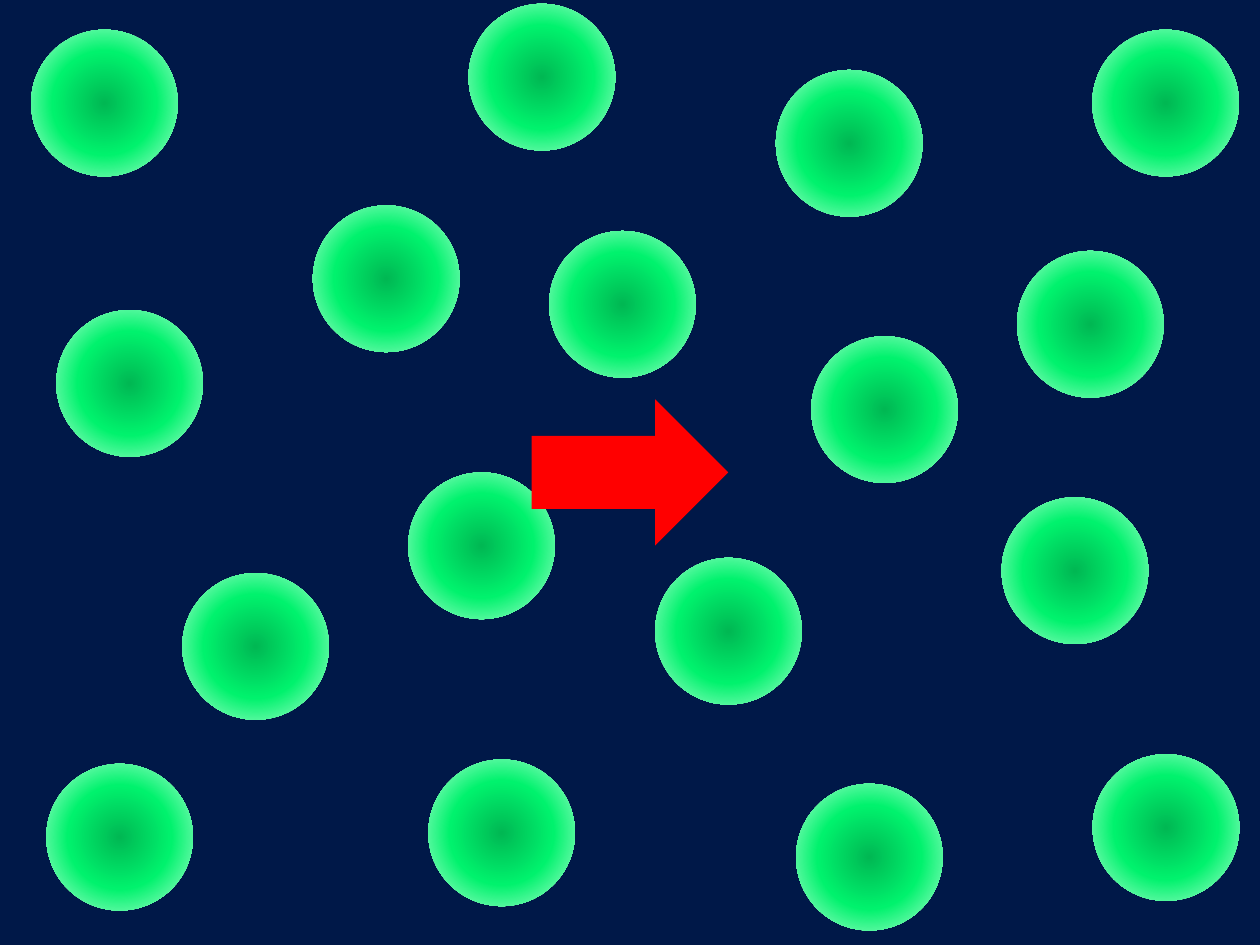
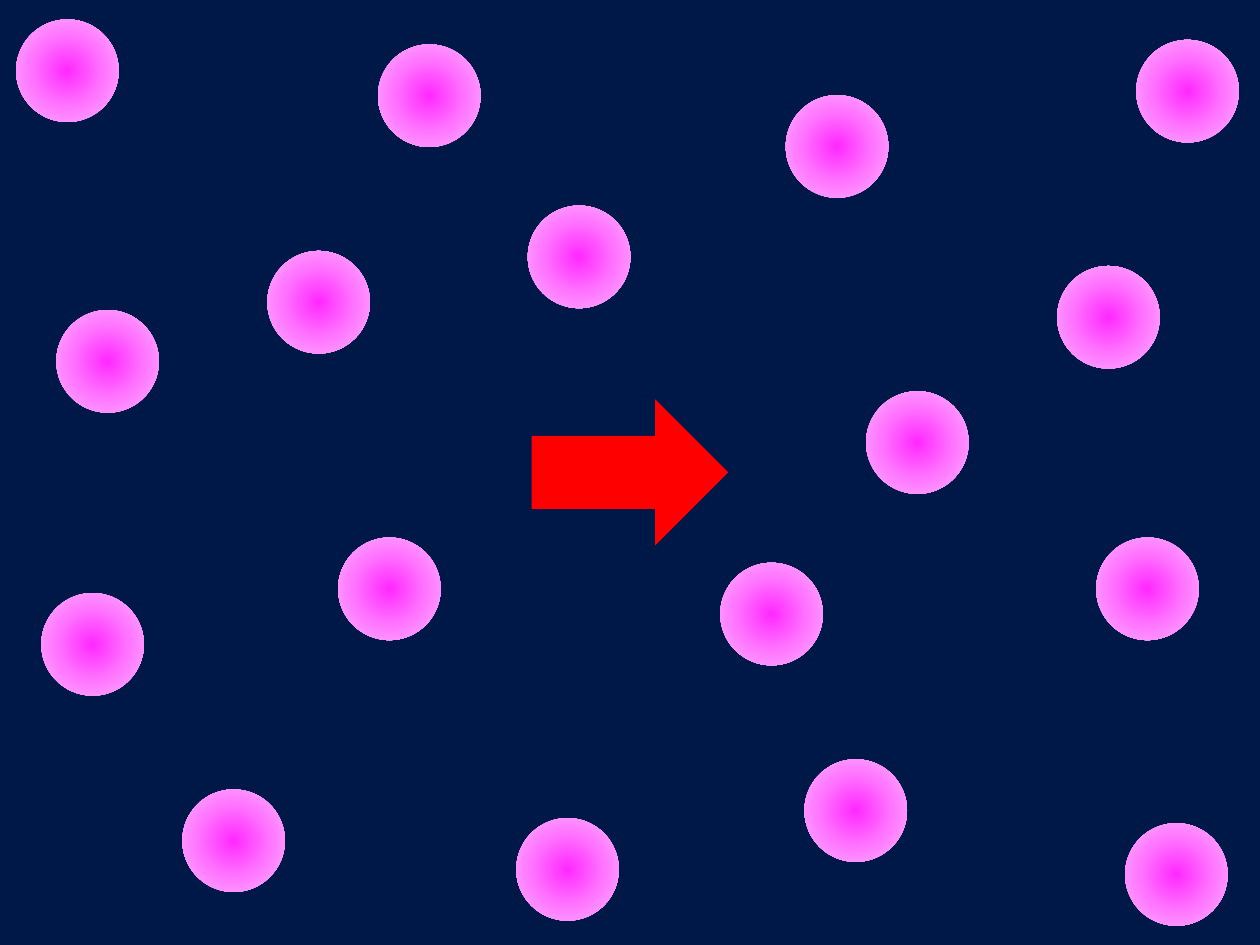
"""Build two slides of scattered glowing balls with a red arrow at the centre."""
from dataclasses import dataclass

import pptx
import pptx.dml.color
import pptx.enum.shapes
import pptx.oxml
import pptx.oxml.ns
import pptx.util

SHAPE = pptx.enum.shapes.MSO_SHAPE
SLIDE_W, SLIDE_H = 720, 540
ARROW_W, ARROW_H = 112.3, 83.5
COLORS = {
    "backdrop": "001848",
    "arrow": "FF0000",
    "green_core": "00B853",
    "green_mid": "00F26D",
    "green_rim": "C1FFDD",
    "pink_core": "FF29FF",
    "pink_mid": "FF75FF",
    "pink_rim": "FFB9FF",
}


@dataclass(frozen=True)
class BallField:
    hue: str
    diameter: float
    corners: tuple[tuple[float, float], ...]


FIELDS = (
    BallField("green", 83.8, (
        (233.3, 270), (572.4, 284.2), (374.4, 318.8), (104.2, 327.5),
        (443.4, 40), (32.2, 177.2), (244.8, 434), (267.8, 2.2),
        (581.2, 143.4), (624.2, 17), (178.8, 117.4), (313.8, 132),
        (26.5, 436.5), (463.6, 192.2), (17.8, 17), (454.9, 447.9),
        (624.4, 431),
    )),
    BallField("pink", 58.6, (
        (295, 467.5), (626.4, 307.2), (23.6, 338.9), (104.2, 451.1),
        (411.6, 321.6), (32.2, 177.2), (193.2, 307.2), (216, 25.4),
        (649.3, 22.8), (604.1, 152), (301.6, 117.5), (449, 54.4),
        (642.9, 470.4), (494.9, 223.6), (152.8, 143.4), (459.7, 433.9),
        (9.2, 11.1),
    )),
)


def add_shape(s, kind: SHAPE, x: float, y: float, w: float, h: float):
    """Add a plain preset shape without line or shadow."""
    sp = s.shapes.add_shape(kind, *map(pptx.util.Pt, (x, y, w, h)))
    sp.shadow.inherit = False
    sp.line.fill.background()
    return sp


def fill_solid(sp, color: str) -> None:
    """Fill a shape with one named colour."""
    sp.fill.solid()
    sp.fill.fore_color.rgb = pptx.dml.color.RGBColor.from_string(COLORS[color])


def fill_radial(sp, hue: str) -> None:
    """Fill a shape with a gradient from its core to its rim."""
    stops = "".join(
        f'<a:gs pos="{pos}"><a:srgbClr val="{COLORS[f"{hue}_{part}"]}"/></a:gs>'
        for part, pos in (("core", 0), ("mid", 50000), ("rim", 100000))
    )
    grad = pptx.oxml.parse_xml(
        f'<a:gradFill {pptx.oxml.ns.nsdecls("a")} rotWithShape="1">'
        f"<a:gsLst>{stops}</a:gsLst>"
        '<a:path path="circle"><a:fillToRect l="50000" t="50000" r="50000" b="50000"/>'
        "</a:path></a:gradFill>"
    )
    sp._element.spPr.find(pptx.oxml.ns.qn("a:prstGeom")).addnext(grad)


def add_field_slide(prs, field: BallField) -> None:
    """Add one slide with the backdrop, the balls and the arrow on top."""
    s = prs.slides.add_slide(prs.slide_layouts[6])
    fill_solid(add_shape(s, SHAPE.RECTANGLE, 0, 0, SLIDE_W, SLIDE_H), "backdrop")
    for x, y in field.corners:
        ball = add_shape(s, SHAPE.OVAL, x, y, field.diameter, field.diameter)
        fill_radial(ball, field.hue)
    arrow = add_shape(s, SHAPE.RIGHT_ARROW, (SLIDE_W - ARROW_W) / 2,
                      (SLIDE_H - ARROW_H) / 2, ARROW_W, ARROW_H)
    fill_solid(arrow, "arrow")


def main() -> None:
    """Create and save the presentation."""
    prs = pptx.Presentation()
    prs.slide_width = pptx.util.Pt(SLIDE_W)
    prs.slide_height = pptx.util.Pt(SLIDE_H)
    for field in FIELDS:
        add_field_slide(prs, field)
    prs.save("out.pptx")


if __name__ == "__main__":
    main()
